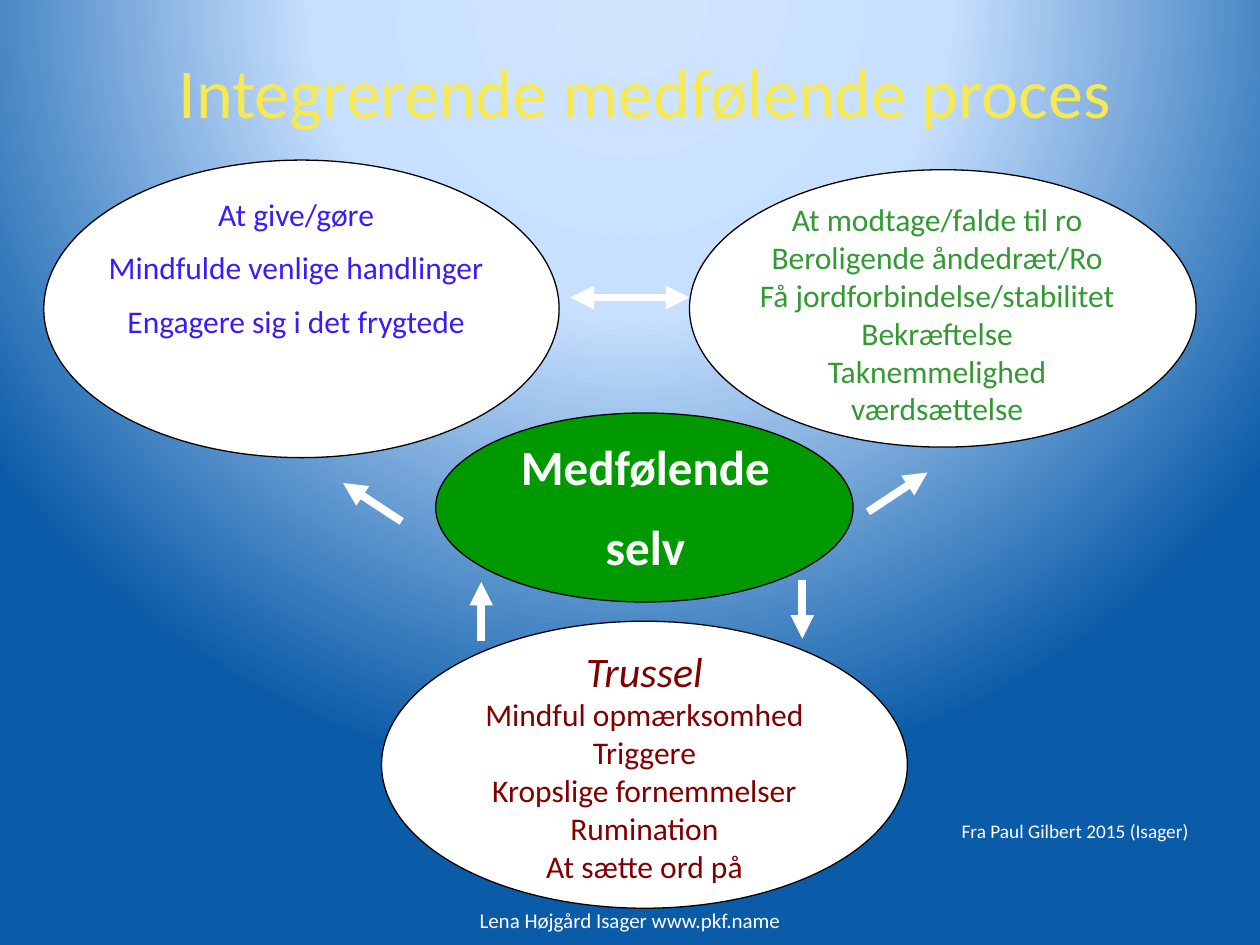
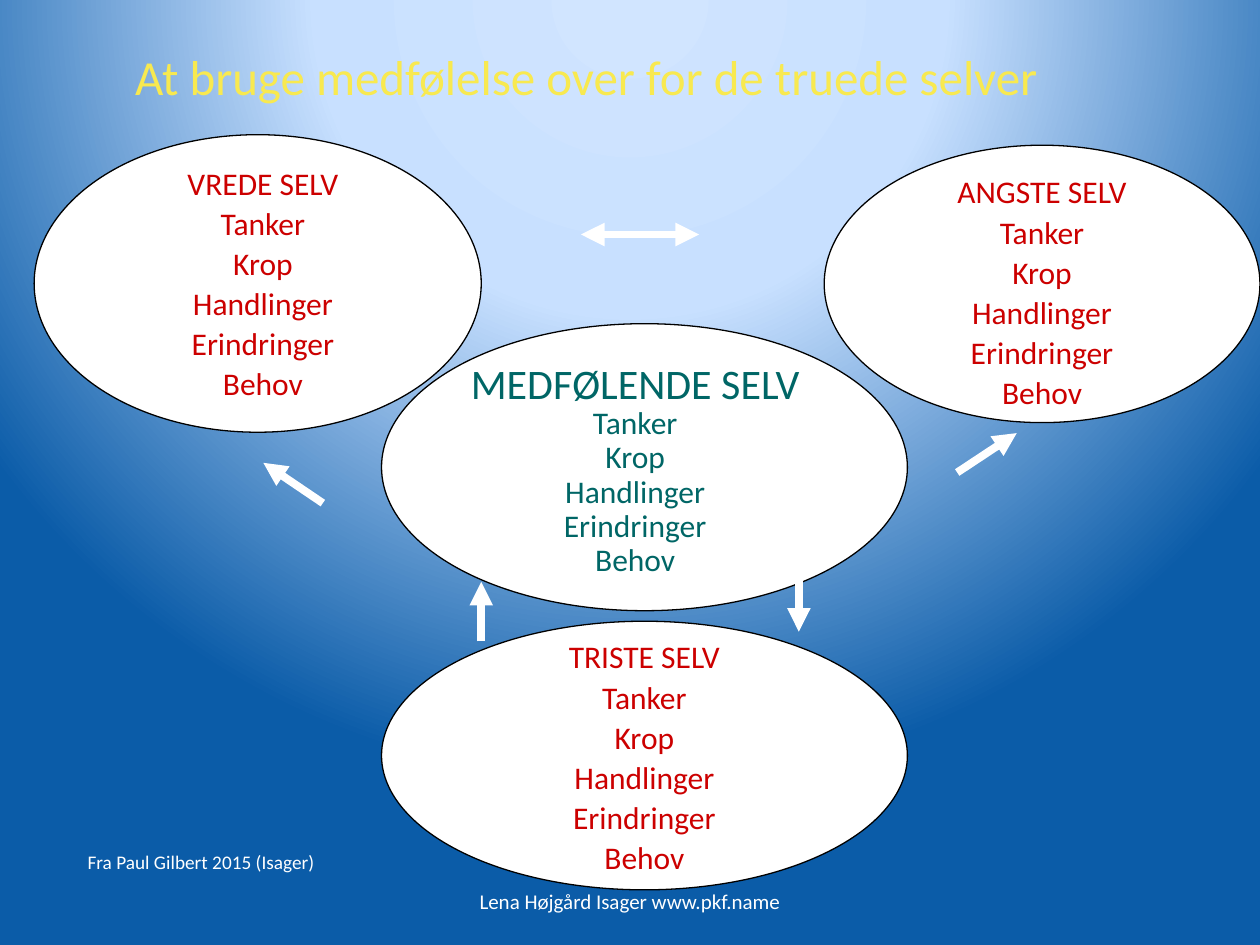
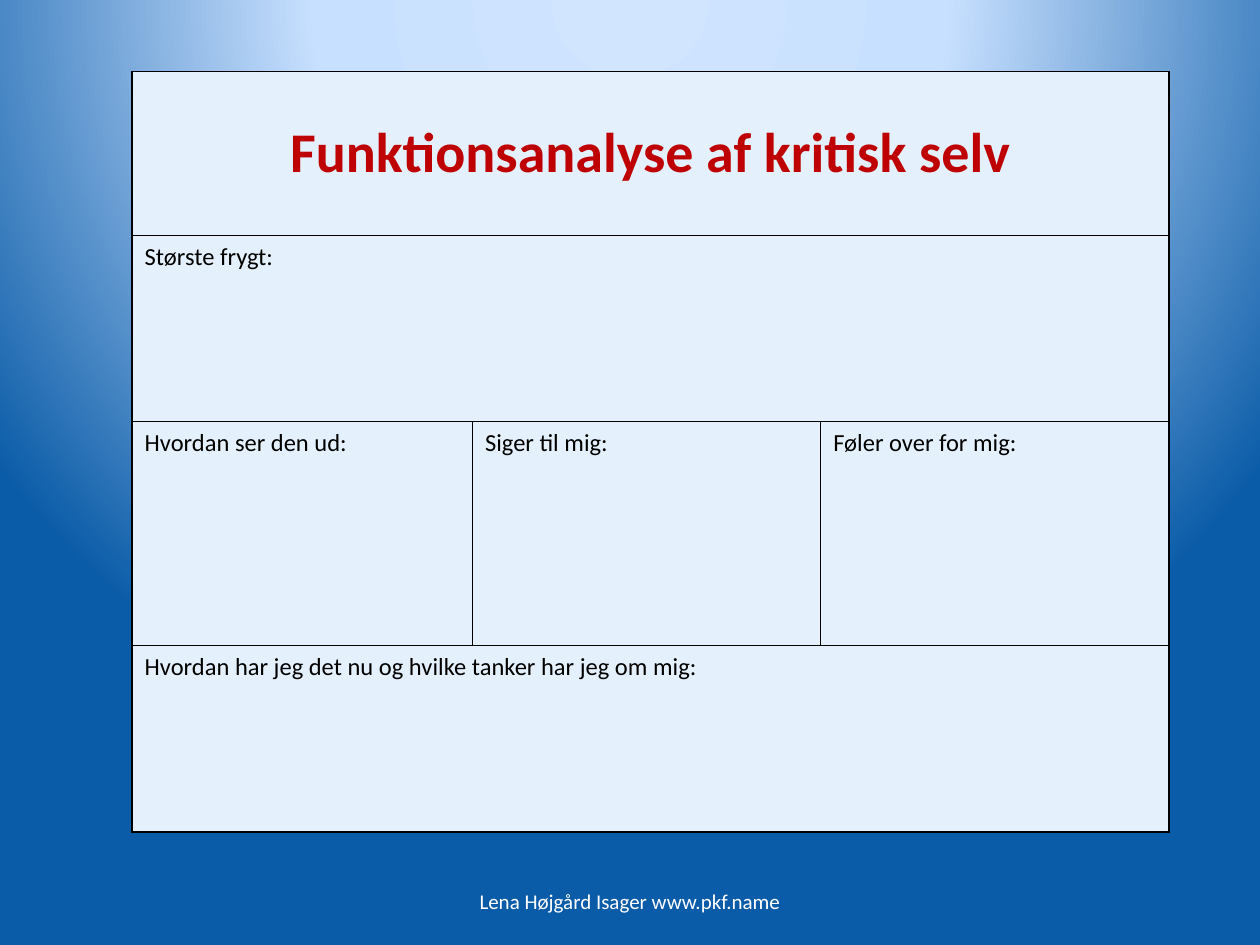
from dataclasses import dataclass

from lxml import etree
from pptx import Presentation
from pptx.dml.color import RGBColor
from pptx.enum.shapes import MSO_CONNECTOR, MSO_SHAPE
from pptx.enum.text import MSO_ANCHOR, MSO_AUTO_SIZE, PP_ALIGN
from pptx.oxml import parse_xml
from pptx.oxml.ns import qn
from pptx.presentation import Presentation as Deck
from pptx.shapes.autoshape import Shape
from pptx.slide import Slide
from pptx.table import _Cell
from pptx.text.text import TextFrame
from pptx.util import Pt

ELLIPSE = MSO_SHAPE.OVAL
STRAIGHT = MSO_CONNECTOR.STRAIGHT
TOP, MIDDLE = MSO_ANCHOR.TOP, MSO_ANCHOR.MIDDLE
LEFT, CENTER = PP_ALIGN.LEFT, PP_ALIGN.CENTER
FIXED, GROW = MSO_AUTO_SIZE.NONE, MSO_AUTO_SIZE.SHAPE_TO_FIT_TEXT
TITLE_ONLY, BLANK = 5, 6
DRAWING_NS = "http://schemas.openxmlformats.org/drawingml/2006/main"


@dataclass(frozen=True)
class Theme:
    font: str = "Calibri"
    white: str = "FFFFFF"
    black: str = "000000"
    title: str = "F8E950"
    giving: str = "3B1BF9"
    receiving: str = "339933"
    threat: str = "800000"
    core: str = "009900"
    threatened: str = "CC0000"
    compassion: str = "006666"
    heading: str = "BE0204"
    cell: str = "E4F0FC"
    glow: tuple[tuple[int, str], ...] = ((0, "D1E5FF"), (40, "C8E0FF"), (100, "0B5CA8"))
    title_large: float = 40
    title_small: float = 28
    table_title: float = 32
    strong: float = 28
    lead: float = 24
    body: float = 18
    cell_text: float = 14
    footer: float = 12
    credit: float = 11
    outline: float = 0.75
    arrow: float = 4.5
    border: float = 1


THEME = Theme()


@dataclass(frozen=True)
class Area:
    left: float
    top: float
    width: float
    height: float

    def lengths(self) -> tuple[Pt, Pt, Pt, Pt]:
        return Pt(self.left), Pt(self.top), Pt(self.width), Pt(self.height)


@dataclass(frozen=True)
class Line:
    text: str
    size: float = THEME.body
    bold: bool = False
    italic: bool = False
    spacing: float = 1
    before: float = 0


@dataclass(frozen=True)
class Words:
    lines: tuple[Line, ...]
    color: str
    align: PP_ALIGN = CENTER


@dataclass(frozen=True)
class Bubble:
    area: Area
    fill: str = THEME.white
    words: Words | None = None
    top_inset: float = 3.6


@dataclass(frozen=True)
class Label:
    area: Area
    words: Words
    anchor: MSO_ANCHOR = TOP


@dataclass(frozen=True)
class Arrow:
    start: tuple[float, float]
    end: tuple[float, float]
    both_ways: bool = False


@dataclass(frozen=True)
class Diagram:
    title: Label
    bubbles: tuple[Bubble, ...]
    labels: tuple[Label, ...]
    arrows: tuple[Arrow, ...]
    footer_top: float
    credit_at: tuple[float, float]


def color(code: str) -> RGBColor:
    return RGBColor.from_string(code)


def write(frame: TextFrame, words: Words) -> None:
    for index, line in enumerate(words.lines):
        para = frame.add_paragraph() if index else frame.paragraphs[0]
        para.alignment = words.align
        para.line_spacing = line.spacing
        para.space_before = Pt(line.before if index else 0)
        span = para.add_run()
        span.text = line.text
        span.font.name = THEME.font
        span.font.size = Pt(line.size)
        span.font.bold = line.bold
        span.font.italic = line.italic
        span.font.color.rgb = color(words.color)


def selv_lines(heading: str, size: float, heading_spacing: float,
               spacing: float, before: float) -> tuple[Line, ...]:
    aspects = ("Tanker", "Krop", "Handlinger", "Erindringer", "Behov")
    return (Line(heading, size, spacing=heading_spacing),
            *(Line(aspect, spacing=spacing, before=before) for aspect in aspects))


def threatened(heading: str, heading_spacing: float = 1) -> Words:
    return Words(selv_lines(heading, THEME.body, heading_spacing, 0.65, 8.8),
                 THEME.threatened)


def paint_background(deck: Deck) -> None:
    stops = "".join(f'<a:gs pos="{position * 1000}"><a:srgbClr val="{code}"/></a:gs>'
                    for position, code in THEME.glow)
    gradient = parse_xml(
        f'<a:gradFill xmlns:a="{DRAWING_NS}" rotWithShape="1"><a:gsLst>{stops}</a:gsLst>'
        '<a:path path="circle"><a:fillToRect l="50000" t="-80000" r="50000" b="180000"/>'
        '</a:path></a:gradFill>')
    background = deck.slide_master.background
    background.fill.solid()
    solid = next(background._cSld.iter(qn("a:solidFill")))
    solid.getparent().replace(solid, gradient)


def fill_label(box: Shape, label: Label) -> None:
    frame = box.text_frame
    frame.word_wrap = True
    frame.auto_size = FIXED
    frame.vertical_anchor = label.anchor
    write(frame, label.words)


def add_label(page: Slide, label: Label) -> None:
    fill_label(page.shapes.add_textbox(*label.area.lengths()), label)


def set_title(page: Slide, label: Label) -> None:
    box = page.shapes.title
    box.left, box.top, box.width, box.height = label.area.lengths()
    fill_label(box, label)


def add_bubble(page: Slide, bubble: Bubble) -> None:
    ellipse = page.shapes.add_shape(ELLIPSE, *bubble.area.lengths())
    ellipse.shadow.inherit = False
    ellipse.fill.solid()
    ellipse.fill.fore_color.rgb = color(bubble.fill)
    ellipse.line.color.rgb = color(THEME.black)
    ellipse.line.width = Pt(THEME.outline)
    if bubble.words:
        frame = ellipse.text_frame
        frame.word_wrap = False
        frame.vertical_anchor = MIDDLE
        frame.margin_top = Pt(bubble.top_inset)
        write(frame, bubble.words)


def add_arrow(page: Slide, arrow: Arrow) -> None:
    ends = (Pt(value) for value in (*arrow.start, *arrow.end))
    connector = page.shapes.add_connector(STRAIGHT, *ends)
    connector.line.color.rgb = color(THEME.white)
    connector.line.width = Pt(THEME.arrow)
    line = connector.line._get_or_add_ln()
    for tag in ("a:headEnd", "a:tailEnd") if arrow.both_ways else ("a:tailEnd",):
        etree.SubElement(line, qn(tag), type="triangle")
    etree.SubElement(connector._element.spPr, qn("a:effectLst"))


def add_footer(page: Slide, top: float) -> None:
    words = Words((Line("Lena Højgård Isager www.pkf.name", THEME.footer),), THEME.white)
    add_label(page, Label(Area(246, top, 228, 29), words, MIDDLE))


def add_credit(page: Slide, left: float, top: float) -> None:
    box = page.shapes.add_textbox(*Area(left, top, 137.5, 13.5).lengths())
    frame = box.text_frame
    frame.word_wrap = False
    frame.auto_size = GROW
    frame.margin_left = frame.margin_right = Pt(3)
    frame.margin_top = frame.margin_bottom = Pt(0)
    write(frame, Words((Line("Fra Paul Gilbert 2015 (Isager)", THEME.credit),),
                       THEME.white, LEFT))


def add_diagram(deck: Deck, diagram: Diagram) -> None:
    page = deck.slides.add_slide(deck.slide_layouts[TITLE_ONLY])
    set_title(page, diagram.title)
    for bubble in diagram.bubbles:
        add_bubble(page, bubble)
    for label in diagram.labels:
        add_label(page, label)
    for arrow in diagram.arrows:
        add_arrow(page, arrow)
    add_footer(page, diagram.footer_top)
    add_credit(page, *diagram.credit_at)


def style_cell(cell: _Cell) -> None:
    properties = cell._tc.get_or_add_tcPr()
    for side in ("a:lnL", "a:lnR", "a:lnT", "a:lnB"):
        border = etree.SubElement(properties, qn(side), w=str(Pt(THEME.border)))
        solid = etree.SubElement(border, qn("a:solidFill"))
        etree.SubElement(solid, qn("a:srgbClr"), val=THEME.black)
    cell.fill.solid()
    cell.fill.fore_color.rgb = color(THEME.cell)


def add_analysis(deck: Deck) -> None:
    rows = (("Funktionsanalyse af kritisk selv",),
            ("Største frygt:",),
            ("Hvordan ser den ud:", "Siger til mig:", "Føler over for mig:"),
            ("Hvordan har jeg det nu og hvilke tanker har jeg om mig:",))
    widths = (194.5, 199, 199)
    heights = (93.6, 106.4, 128, 106.4)
    page = deck.slides.add_slide(deck.slide_layouts[BLANK])
    area = Area(75.5, 41, sum(widths), sum(heights))
    table = page.shapes.add_table(len(rows), len(widths), *area.lengths()).table
    table.first_row = table.horz_banding = False
    for column, width in zip(table.columns, widths):
        column.width = Pt(width)
    for row, height in zip(table.rows, heights):
        row.height = Pt(height)
    for cell in table.iter_cells():
        style_cell(cell)
    for row_index, texts in enumerate(rows):
        if len(texts) == 1:
            table.cell(row_index, 0).merge(table.cell(row_index, len(widths) - 1))
        for column_index, text in enumerate(texts):
            cell = table.cell(row_index, column_index)
            if row_index == 0:
                cell.vertical_anchor = MIDDLE
                words = Words((Line(text, THEME.table_title, bold=True),), THEME.heading)
            else:
                words = Words((Line(text, THEME.cell_text),), THEME.black, LEFT)
            write(cell.text_frame, words)
    add_footer(page, 500.5)


PROCESS = Diagram(
    title=Label(Area(80.5, 24, 576, 55.5),
                Words((Line("Integrerende medfølende proces", THEME.title_large),),
                      THEME.title)),
    bubbles=(
        Bubble(Area(25, 91.5, 294.5, 170)),
        Bubble(Area(394, 97, 289.5, 158.5)),
        Bubble(Area(218, 355, 300.5, 164), words=Words((
            Line("Trussel", THEME.lead, italic=True),
            Line("Mindful opmærksomhed"),
            Line("Triggere"),
            Line("Kropslige fornemmelser"),
            Line("Rumination"),
            Line("At sætte ord på")), THEME.threat)),
        Bubble(Area(249, 236, 238.5, 108), THEME.core),
    ),
    labels=(
        Label(Area(49, 108, 240.5, 127.5), Words((
            Line("At give/gøre"),
            Line("Mindfulde venlige handlinger", before=8.8),
            Line("Engagere sig i det frygtede", before=8.8)), THEME.giving)),
        Label(Area(266.5, 246, 204.5, 87), Words((
            Line("Medfølende", THEME.strong, bold=True),
            Line("selv", THEME.strong, bold=True, before=12)), THEME.white)),
        Label(Area(424, 111, 223, 138), Words((
            Line("At modtage/falde til ro"),
            Line("Beroligende åndedræt/Ro"),
            Line("Få jordforbindelse/stabilitet"),
            Line("Bekræftelse"),
            Line("Taknemmelighed værdsættelse")), THEME.receiving)),
    ),
    arrows=(
        Arrow((458.5, 331.5), (458.5, 365)),
        Arrow((275, 366.5), (275, 332.5)),
        Arrow((229.5, 298), (196, 276)),
        Arrow((496, 292.5), (530, 270)),
        Arrow((326, 170), (394, 170), both_ways=True),
    ),
    footer_top=511,
    credit_at=(546.5, 468),
)

SELVES = Diagram(
    title=Label(Area(70, 23, 562.5, 41),
                Words((Line("At bruge medfølelse over for de truede selver",
                            THEME.title_small),), THEME.title, LEFT)),
    bubbles=(
        Bubble(Area(19.5, 77, 255.5, 170)),
        Bubble(Area(471, 83, 249, 158.5), words=threatened("ANGSTE SELV"), top_inset=11),
        Bubble(Area(218, 355, 300.5, 153.5), words=threatened("TRISTE SELV")),
        Bubble(Area(218, 185, 300.5, 164)),
    ),
    labels=(
        Label(Area(22.5, 97, 255.5, 197), threatened("VREDE SELV", 0.65)),
        Label(Area(241, 213, 244, 152.5),
              Words(selv_lines("MEDFØLENDE SELV", THEME.lead, 0.5, 0.5, 8.8),
                    THEME.compassion)),
    ),
    arrows=(
        Arrow((456.5, 327), (456.5, 361)),
        Arrow((275, 366.5), (275, 332.5)),
        Arrow((184.5, 287.5), (150.5, 264.5)),
        Arrow((547, 270), (581, 247.5)),
        Arrow((332, 134), (399.5, 134), both_ways=True),
    ),
    footer_top=500.5,
    credit_at=(47, 486),
)


def main() -> None:
    deck = Presentation()
    deck.slide_width, deck.slide_height = Pt(720), Pt(540)
    paint_background(deck)
    add_diagram(deck, PROCESS)
    add_diagram(deck, SELVES)
    add_analysis(deck)
    deck.save("out.pptx")


if __name__ == "__main__":
    main()
